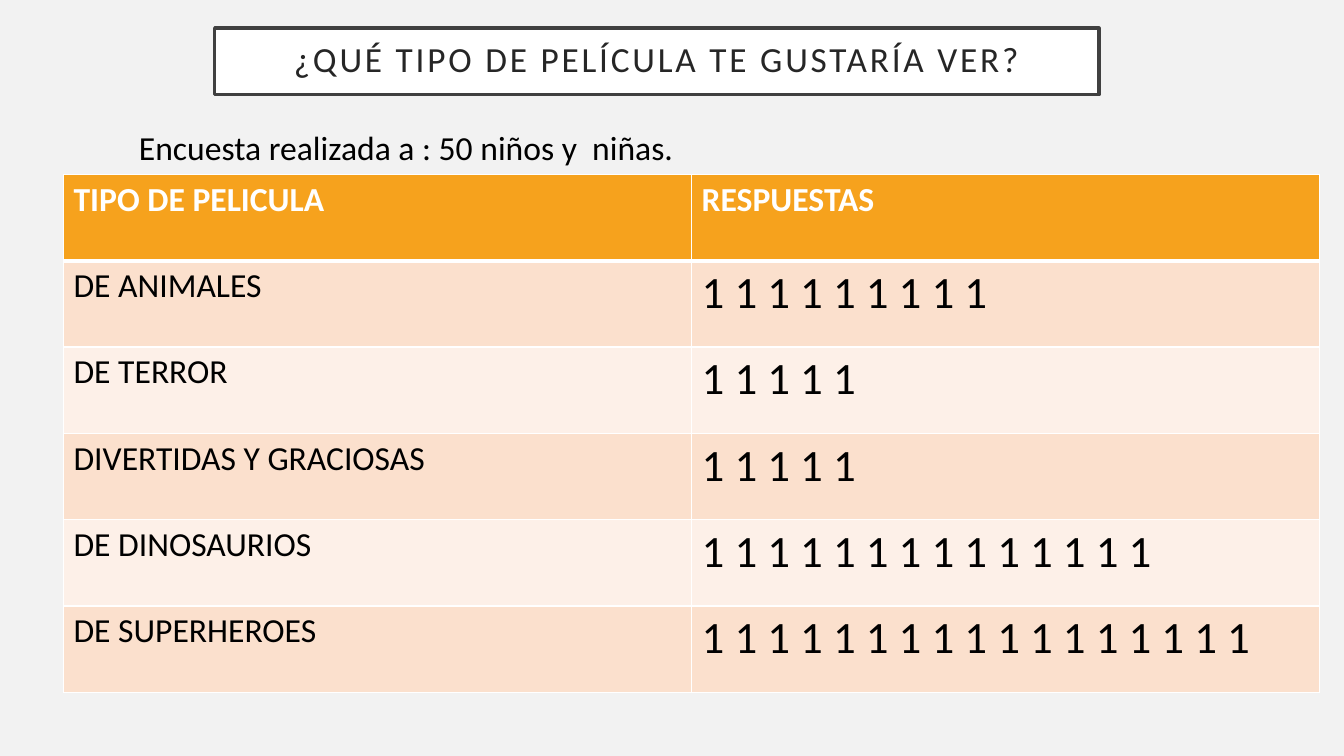
from dataclasses import dataclass

from lxml import etree
from pptx import Presentation
from pptx.dml.color import RGBColor
from pptx.enum.text import MSO_ANCHOR, MSO_AUTO_SIZE, PP_ALIGN
from pptx.oxml.ns import qn
from pptx.util import Inches, Pt

MIDDLE = MSO_ANCHOR.MIDDLE
CENTER = PP_ALIGN.CENTER
NO_AUTOFIT = MSO_AUTO_SIZE.NONE
TITLE_ONLY_LAYOUT = 5


@dataclass(frozen=True)
class Theme:
    font: str = "Calibri"
    background: str = "F2F2F2"
    white: str = "FFFFFF"
    black: str = "000000"
    title_text: str = "262626"
    title_line: str = "404040"
    header_fill: str = "F6A21D"
    band_fills: tuple = ("FBE0CD", "FDF0E8")
    title_size: float = 25.2
    body_size: float = 24
    tally_size: float = 32


THEME = Theme()

# Film types with the number of votes each one received
VOTES = [
    ("DE ANIMALES", 9),
    ("DE TERROR", 5),
    ("DIVERTIDAS Y GRACIOSAS", 5),
    ("DE DINOSAURIOS", 14),
    ("DE SUPERHEROES", 17),
]


def set_fill(target, color):
    target.fill.solid()
    target.fill.fore_color.rgb = RGBColor.from_string(color)


def add_run(paragraph, text, size, color, bold=False):
    run = paragraph.add_run()
    run.text = text
    run.font.name = THEME.font
    run.font.size = Pt(size)
    run.font.bold = bold
    run.font.color.rgb = RGBColor.from_string(color)
    return run


def set_cell_borders(cell, bottom_width):
    properties = cell._tc.get_or_add_tcPr()
    for side, width in (("L", 1), ("R", 1), ("T", 1), ("B", bottom_width)):
        line = etree.SubElement(properties, qn(f"a:ln{side}"), w=str(Pt(width)))
        fill = etree.SubElement(line, qn("a:solidFill"))
        etree.SubElement(fill, qn("a:srgbClr"), val=THEME.white)


def add_title(slide, left, top, width, height):
    title = slide.shapes.title
    title.left, title.top = Inches(left), Inches(top)
    title.width, title.height = Inches(width), Inches(height)
    set_fill(title, THEME.white)
    title.line.color.rgb = RGBColor.from_string(THEME.title_line)
    title.line.width = Pt(2.5)

    frame = title.text_frame
    frame.word_wrap = True
    frame.auto_size = NO_AUTOFIT
    frame.vertical_anchor = MIDDLE
    frame.margin_left = frame.margin_right = Inches(0.2)
    frame.margin_top = frame.margin_bottom = Inches(0.2)
    paragraph = frame.paragraphs[0]
    paragraph.alignment = CENTER
    paragraph.line_spacing = 0.9
    run = add_run(paragraph, "¿QUÉ TIPO DE PELÍCULA TE GUSTARÍA VER?",
                  THEME.title_size, THEME.title_text)
    run.font._element.set("spc", "200")  # letter spacing of 2 points


def add_survey_note(slide, left, top, width, height):
    note = slide.shapes.add_textbox(Inches(left), Inches(top),
                                    Inches(width), Inches(height))
    note.text_frame.word_wrap = True
    add_run(note.text_frame.paragraphs[0],
            "Encuesta realizada a : 50 niños y  niñas.",
            THEME.body_size, THEME.black)


def add_votes_table(slide, left, top, width, height):
    rows = [("TIPO DE PELICULA", "RESPUESTAS")]
    rows += [(film, " ".join("1" * count)) for film, count in VOTES]
    table = slide.shapes.add_table(len(rows), 2, Inches(left), Inches(top),
                                   Inches(width), Inches(height)).table

    for row_index, texts in enumerate(rows):
        is_header = row_index == 0
        band = THEME.band_fills[(row_index - 1) % 2]
        for column_index, text in enumerate(texts):
            cell = table.cell(row_index, column_index)
            set_cell_borders(cell, bottom_width=3 if is_header else 1)
            set_fill(cell, THEME.header_fill if is_header else band)
            is_tally = column_index == 1 and not is_header
            add_run(cell.text_frame.paragraphs[0], text,
                    THEME.tally_size if is_tally else THEME.body_size,
                    THEME.white if is_header else THEME.black,
                    bold=is_header)


def build_survey_slide(presentation):
    layout = presentation.slide_layouts[TITLE_ONLY_LAYOUT]
    slide = presentation.slides.add_slide(layout)
    set_fill(slide.background, THEME.background)
    add_title(slide, 2.13, 0.28, 8.77, 0.66)
    add_votes_table(slide, 0.63, 1.73, 12.46, 5.14)
    add_survey_note(slide, 1.28, 1.21, 5.97, 0.5)


def main():
    presentation = Presentation()
    presentation.slide_width = Inches(13.33)
    presentation.slide_height = Inches(7.5)
    build_survey_slide(presentation)
    presentation.save("out.pptx")


if __name__ == "__main__":
    main()
